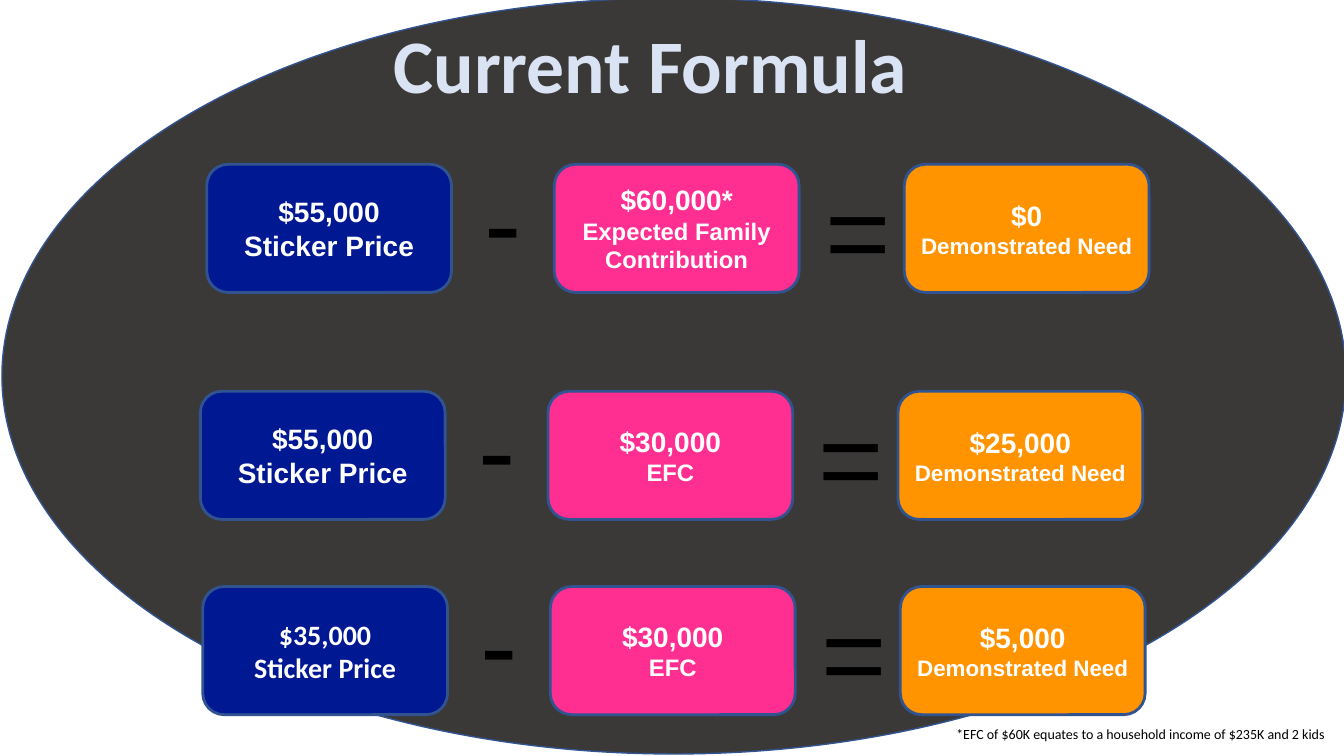
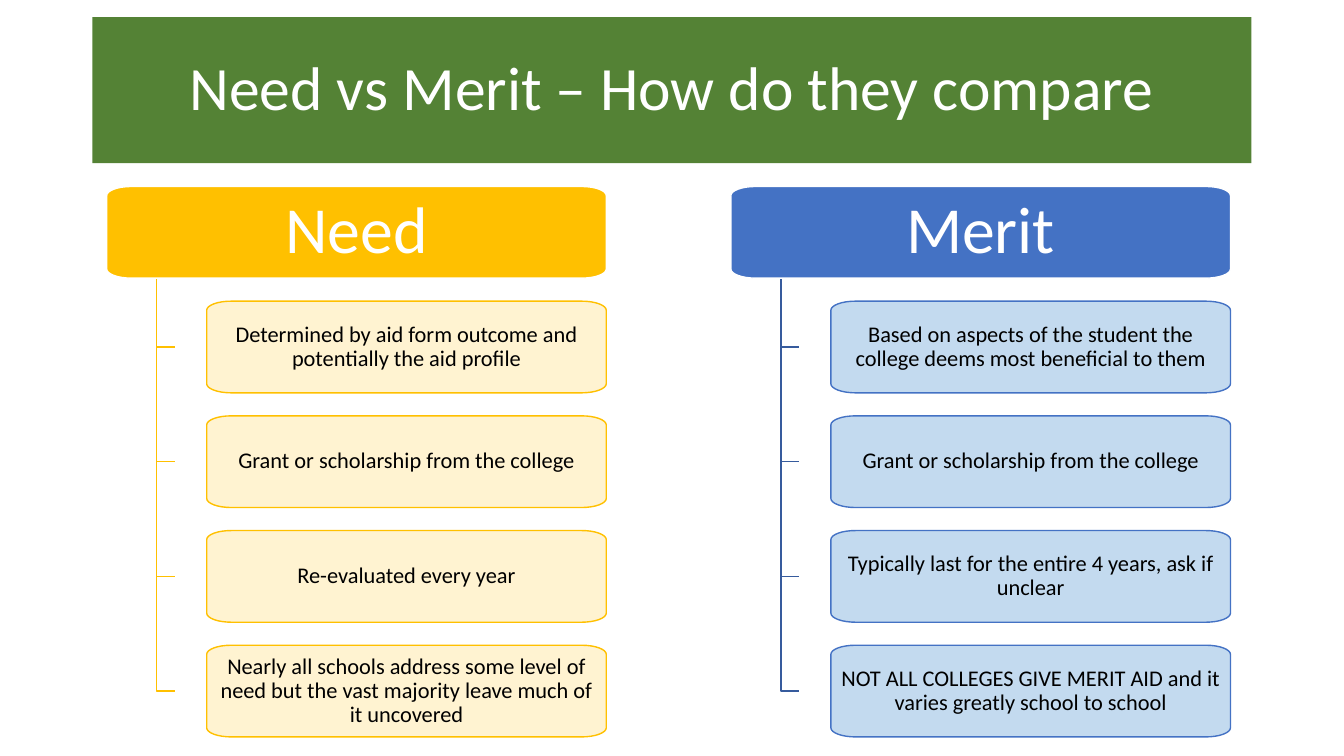
"""Build two slides: the aid formula, and need compared with merit."""
from math import cos, pi, sin

from lxml.etree import SubElement
from pptx import Presentation
from pptx.dml.color import RGBColor
from pptx.enum.shapes import MSO_SHAPE as Shape
from pptx.enum.text import MSO_ANCHOR as Anchor, PP_ALIGN as Align
from pptx.oxml.ns import qn
from pptx.util import Cm, Pt

BODY, CARD_FONT = "Calibri", "Arial"
WHITE, BLACK = "FFFFFF", "000000"
CHARCOAL, PALE_BLUE, GREEN = "3B3838", "DAE3F3", "548235"
OVAL_LINE, BOX_LINE = "325491", "31538F"

PRICE = {"dx": 0, "fill": "011893"}
FAMILY = {"dx": 8.76, "fill": "FF2F92"}
NEED = {"dx": 17.58, "fill": "FF9300"}
BOX_W, BOX_H = 6.17, 3.23
SIGNS = [("-", 6.76, -0.46, 1.47), ("=", 15.34, -0.23, 2.18)]
SIGN_H = 3.68

EQUATIONS = [
    {"at": (5.21, 4.14), "price_font": CARD_FONT, "amounts": ("$55,000", "$60,000*", "$0"),
     "family": ["Expected Family", "Contribution"]},
    {"at": (5.05, 9.86), "price_font": CARD_FONT, "amounts": ("$55,000", "$30,000", "$25,000"),
     "family": ["EFC"]},
    {"at": (5.11, 14.78), "price_font": BODY, "amounts": ("$35,000", "$30,000", "$5,000"),
     "family": ["EFC"]},
]
FOOTNOTE = "*EFC of $60K equates to a household income of $235K and 2 kids"

COLUMNS = [
    {"x": 2.69, "head": "Need", "main": "FFC000", "branch": "FFC000", "tint": "FFF2CC",
     "items": ["Determined by aid form outcome and potentially the aid profile",
               "Grant or scholarship from the college",
               "Re-evaluated every year",
               "Nearly all schools address some level of need but the vast majority "
               "leave much of it uncovered"]},
    {"x": 18.42, "head": "Merit", "main": "4472C4", "branch": "365B9D", "tint": "BDD7EE",
     "items": ["Based on aspects of the student the college deems most beneficial to them",
               "Grant or scholarship from the college",
               "Typically last for the entire 4 years, ask if unclear",
               "NOT ALL COLLEGES GIVE MERIT AID and it varies greatly school to school"]},
]
HEAD_Y, HEAD_W, CARD_H, PITCH = 4.7, 12.59, 2.31, 2.89
TRUNK_DX, TICK, CARD_DX = 1.26, 0.46, 2.52
CORNER_X, CORNER_Y, CORNER_STEPS = 0.62, 0.23, 8


def rgb(value):
    return RGBColor.from_string(value)


def paint(sp, fill, line, width=1):
    sp.shadow.inherit = False
    if fill:
        sp.fill.solid()
        sp.fill.fore_color.rgb = rgb(fill)
    else:
        sp.fill.background()
    if line:
        sp.line.color.rgb = rgb(line)
        sp.line.width = Pt(width)
    else:
        sp.line.fill.background()


def write(sp, lines, font, color, bold=False, align=Align.CENTER, anchor=Anchor.MIDDLE,
          wrap=True, spacing=None, inset=(0.25, 0.13)):
    """Fill a shape with (text, size) lines, one paragraph each."""
    tf = sp.text_frame
    tf.word_wrap = wrap
    tf.vertical_anchor = anchor
    tf.margin_left = tf.margin_right = Cm(inset[0])
    tf.margin_top = tf.margin_bottom = Cm(inset[1])
    for i, (text, size) in enumerate(lines):
        p = tf.add_paragraph() if i else tf.paragraphs[0]
        p.text = text
        p.alignment = align
        if spacing:
            p.line_spacing = spacing
        p.font.name, p.font.size, p.font.bold = font, Pt(size), bold
        p.font.color.rgb = rgb(color)


def add_preset(s, kind, box, fill, line=None, width=1):
    sp = s.shapes.add_shape(kind, *map(Cm, box))
    paint(sp, fill, line, width)
    return sp


def add_text(s, box, text, size, color, font=BODY, **style):
    sp = s.shapes.add_textbox(*map(Cm, box))
    write(sp, [(text, size)], font, color, anchor=Anchor.TOP, **style)


def add_outline(s, points, close):
    start, *rest = [(Cm(x), Cm(y)) for x, y in points]
    builder = s.shapes.build_freeform(*start)
    builder.add_line_segments(rest, close=close)
    return builder.convert_to_shape()


def add_card(s, x, y, w, fill, line):
    """Draw a card whose corners are quarter ellipses."""
    right, bottom = x + w - CORNER_X, y + CARD_H - CORNER_Y
    centres = [(right, bottom), (x + CORNER_X, bottom),
               (x + CORNER_X, y + CORNER_Y), (right, y + CORNER_Y)]
    points = []
    for quarter, (cx, cy) in enumerate(centres):
        for step in range(CORNER_STEPS + 1):
            angle = (quarter + step / CORNER_STEPS) * pi / 2
            points.append((cx + CORNER_X * cos(angle), cy + CORNER_Y * sin(angle)))
    sp = add_outline(s, points, True)
    paint(sp, fill, line)
    return sp


def set_opacity(sp, percent):
    color = sp.element.spPr.find(qn("a:solidFill"))[0]
    SubElement(color, qn("a:alpha")).set("val", str(percent * 1000))


def build_formula(s):
    add_preset(s, Shape.OVAL, (0.05, -0.05, 33.87, 19.05), CHARCOAL, OVAL_LINE)
    for eq in EQUATIONS:
        x, y = eq["at"]
        labels = [(PRICE, ["Sticker Price"], 20, eq["price_font"]),
                  (FAMILY, eq["family"], 17, CARD_FONT),
                  (NEED, ["Demonstrated Need"], 16, CARD_FONT)]
        for amount, (term, label, size, font) in zip(eq["amounts"], labels):
            sp = add_preset(s, Shape.ROUNDED_RECTANGLE, (x + term["dx"], y, BOX_W, BOX_H),
                            term["fill"], BOX_LINE, 2)
            write(sp, [(amount, 20)] + [(text, size) for text in label], font, WHITE, bold=True)
        for sign, dx, dy, w in SIGNS:
            add_text(s, (x + dx, y + dy, w, SIGN_H), sign, 80, BLACK, CARD_FONT, align=Align.LEFT)
    add_text(s, (9.6, 0.33, 13.59, 2.57), "Current Formula", 54, PALE_BLUE, bold=True, wrap=False)
    add_text(s, (23.85, 18.16, 9.93, 0.69), FOOTNOTE, 10, BLACK, align=Align.LEFT, wrap=False)


def build_comparison(s):
    banner = add_preset(s, Shape.RECTANGLE, (2.33, 0.43, 29.21, 3.68), GREEN)
    write(banner, [("Need vs Merit – How do they compare", 44)], BODY, WHITE, spacing=0.9)
    for col in COLUMNS:
        x, trunk = col["x"], col["x"] + TRUNK_DX
        for i, item in enumerate(col["items"], 1):
            y = HEAD_Y + i * PITCH
            middle = y + CARD_H / 2
            branch = add_outline(s, [(trunk, HEAD_Y + CARD_H), (trunk, middle),
                                     (trunk + TICK, middle)], False)
            paint(branch, None, col["branch"])
            card = add_card(s, x + CARD_DX, y, HEAD_W - CARD_DX, col["tint"], col["main"])
            set_opacity(card, 90)
            write(card, [(item, 16)], BODY, BLACK, spacing=0.9, inset=(0.13, 0.1))
        head = add_card(s, x, HEAD_Y, HEAD_W, col["main"], WHITE)
        write(head, [(col["head"], 47)], BODY, WHITE, spacing=0.9, inset=(0.3, 0.23))


def main():
    prs = Presentation()
    prs.slide_width, prs.slide_height = Cm(33.87), Cm(19.05)
    for build in (build_formula, build_comparison):
        build(prs.slides.add_slide(prs.slide_layouts[6]))
    prs.save("out.pptx")


if __name__ == "__main__":
    main()
